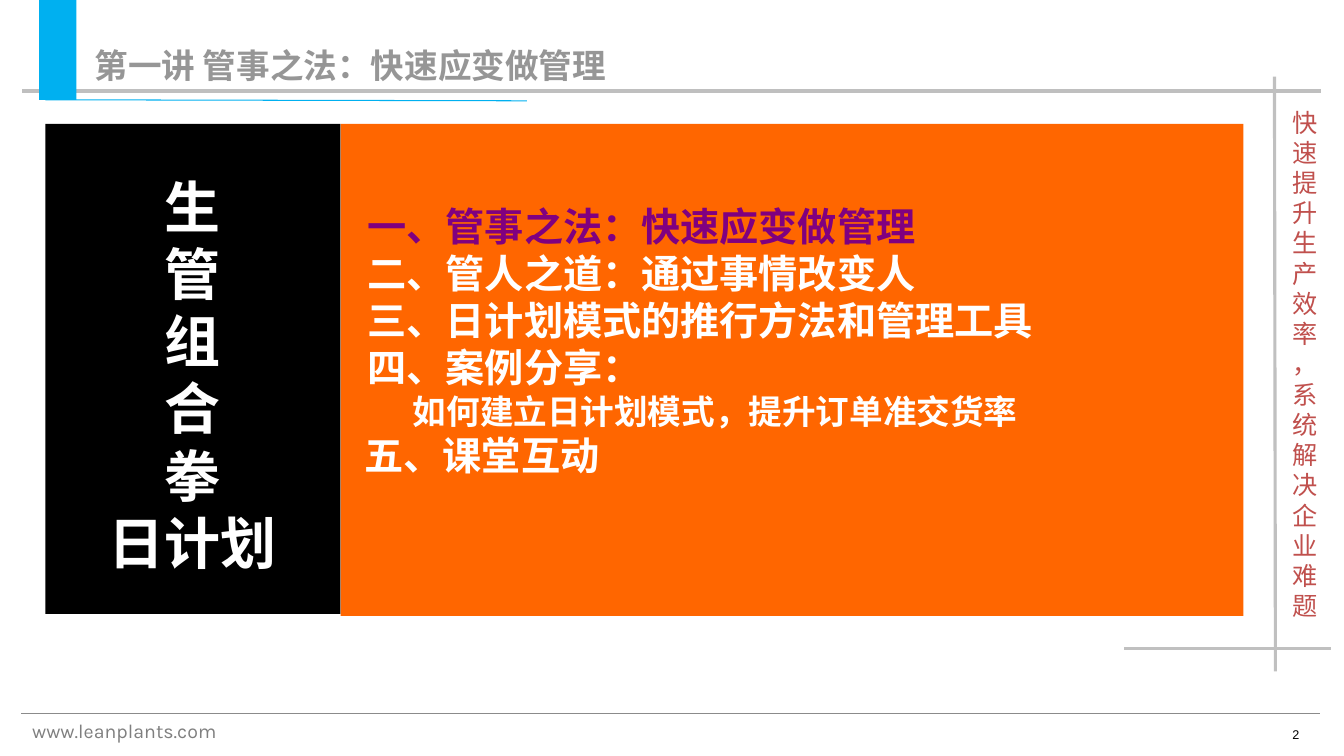
from lxml import etree
from pptx import Presentation
from pptx import util as u
from pptx.dml.color import RGBColor
from pptx.enum import shapes, text
from pptx.oxml import ns

WIDTH, HEIGHT = 13.34, 7.5
COLUMNS, ROWS = 100, 75
CJK = "Noto Sans CJK SC"
SLOGAN = "快速提升生产效率，系统解决企业难题"
PROGRAMME = ["生", "管", "组", "合", "拳", "日计划"]
AGENDA = [
    ("一、管事之法：快速应变做管理", 28, "800080", 0.27),
    ("二、管人之道：通过事情改变人", 28, "FFFFFF", 0.27),
    ("三、日计划模式的推行方法和管理工具", 28, "FFFFFF", 0.27),
    ("四、案例分享：", 28, "FFFFFF", 0.27),
    ("如何建立日计划模式，提升订单准交货率", 24, "FFFFFF", 0.72),
    ("五、课堂互动", 28, "FFFFFF", 0.24),
]


def col(count):
    return u.Inches(count * WIDTH / COLUMNS)


def row(count):
    return u.Inches(count * HEIGHT / ROWS)


def place(left, top, width, height):
    return col(left), row(top), col(width), row(height)


def color(value):
    return RGBColor.from_string(value)


def add_line(page, start, end, stroke, weight):
    line = page.shapes.add_connector(
        shapes.MSO_CONNECTOR.STRAIGHT,
        col(start[0]), row(start[1]), col(end[0]), row(end[1]))
    line.line.color.rgb = color(stroke)
    line.line.width = u.Pt(weight)
    etree.SubElement(line._element.spPr, ns.qn("a:effectLst"))


def add_panel(page, area, fill):
    panel = page.shapes.add_shape(shapes.MSO_SHAPE.RECTANGLE, *place(*area))
    panel.shadow.inherit = False
    panel.fill.solid()
    panel.fill.fore_color.rgb = color(fill)
    panel.line.fill.background()
    return panel


def add_label(page, area):
    return page.shapes.add_textbox(*place(*area))


def set_frame(box, top=0.05, right=0.1, left=0.1, wrap=True,
              anchor=text.MSO_ANCHOR.TOP):
    frame = box.text_frame
    frame.word_wrap = wrap
    frame.vertical_anchor = anchor
    frame.margin_left, frame.margin_right = u.Inches(left), u.Inches(right)
    frame.margin_top, frame.margin_bottom = u.Inches(top), u.Inches(0.05)
    return frame


def write(frame, index, words, size, ink, font=CJK, bold=False,
          align=text.PP_ALIGN.LEFT, indent=0, pitch=1.2):
    para = frame.add_paragraph() if index else frame.paragraphs[0]
    para.alignment = align
    if pitch:
        para.line_spacing = u.Pt(round(size * pitch, 1))
    if indent:
        para._p.get_or_add_pPr().set("marL", str(u.Inches(indent)))
    span = para.add_run()
    span.text = words
    span.font.size = u.Pt(size)
    span.font.bold = bold
    span.font.color.rgb = color(ink)
    span.font.name = font
    east = etree.SubElement(span._r.get_or_add_rPr(), ns.qn("a:ea"))
    east.set("typeface", CJK)


def add_furniture(page):
    add_line(page, (1.57, 70.8), (98.2, 70.8), "8B8B8B", 1)
    add_line(page, (1.65, 9), (98.28, 9), "BFBFBF", 3)
    add_line(page, (94.83, 7.6), (94.9, 66.6), "C0C0C0", 2.25)
    add_line(page, (83.66, 64.3), (99.03, 64.3), "C0C0C0", 2.25)
    address = set_frame(add_label(page, (1.65, 70.8, 23.39, 3.4)))
    write(address, 0, "www.leanplants.com", 14, "7F7F7F", "Karla", pitch=None)
    number = set_frame(add_label(page, (95.43, 71.6, 2.02, 2.5)), wrap=False)
    write(number, 0, "2", 9, "000000", "Arial", pitch=None)
    slogan = set_frame(add_label(page, (95.43, 9.9, 2.92, 52)), 0.07, right=0)
    for index, letter in enumerate(SLOGAN):
        write(slogan, index, letter, 18, "C0504D")


def add_title(page):
    add_panel(page, (2.92, 0, 2.77, 9.9), "00B0F0")
    add_line(page, (3.37, 9.9), (39.21, 10), "00B0F0", 0.75)
    title = set_frame(add_label(page, (6.3, 3.6, 45.43, 5)), 0.09)
    write(title, 0, "第一讲 管事之法：快速应变做管理", 24, "969696", bold=True)


def add_agenda(page):
    panel = add_panel(page, (25.34, 12.3, 67.17, 48.8), "FF6600")
    agenda = set_frame(panel, 0.78, left=0.1)
    for index, (words, size, ink, inset) in enumerate(AGENDA):
        write(agenda, index, words, size, ink, bold=True, indent=inset - 0.1)


def add_programme(page):
    panel = add_panel(page, (3.37, 12.3, 21.96, 48.6), "000000")
    programme = set_frame(panel, 0.15, wrap=False,
                          anchor=text.MSO_ANCHOR.MIDDLE)
    for index, words in enumerate(PROGRAMME):
        write(programme, index, words, 40, "FFFFFF", "Arial", True,
              text.PP_ALIGN.CENTER)


def main():
    deck = Presentation()
    deck.slide_width, deck.slide_height = u.Inches(WIDTH), u.Inches(HEIGHT)
    page = deck.slides.add_slide(deck.slide_layouts[6])
    add_furniture(page)
    add_title(page)
    add_agenda(page)
    add_programme(page)
    deck.save("out.pptx")


if __name__ == "__main__":
    main()
